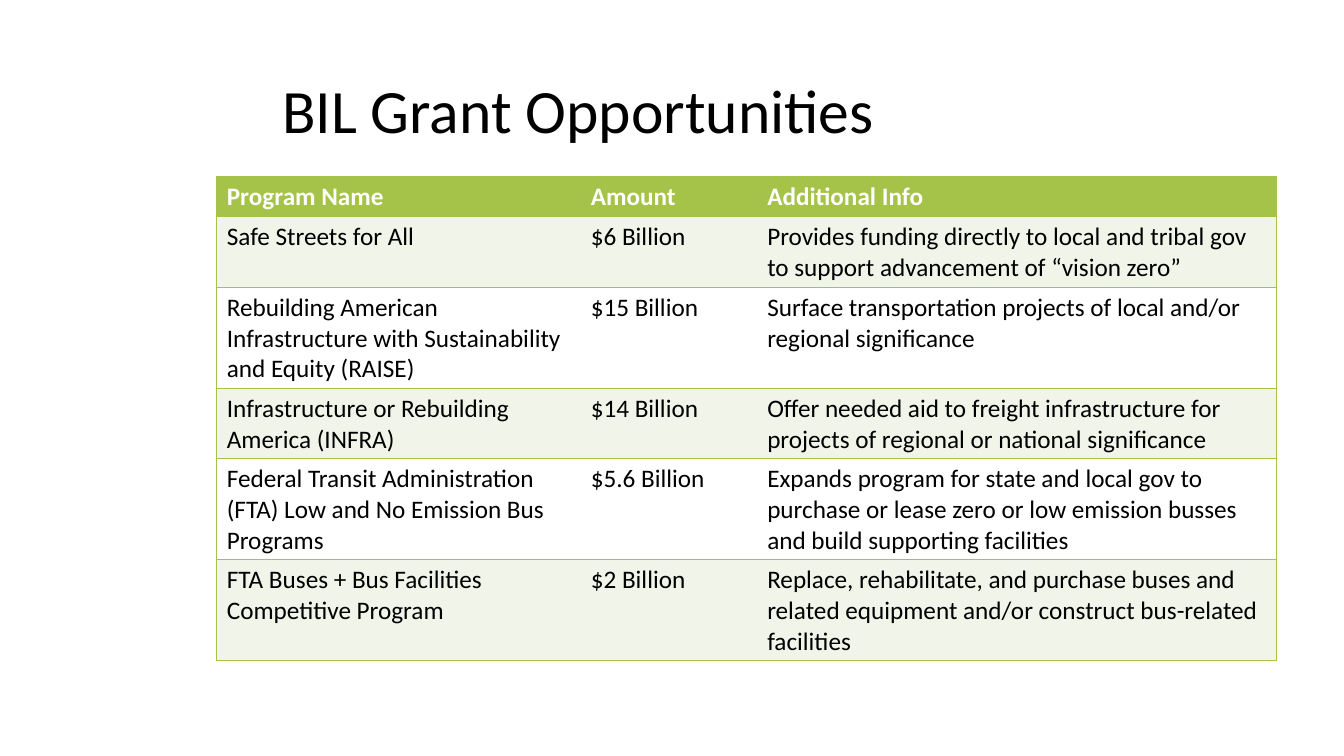
from pptx import Presentation
from pptx.dml.color import RGBColor
from pptx.enum.text import MSO_ANCHOR
from pptx.oxml.ns import qn
from pptx.util import Inches, Pt
from lxml.etree import SubElement

FONT = "Calibri"
GREEN = RGBColor(0xA5, 0xC2, 0x49)
PALE_GREEN = RGBColor(0xF0, 0xF4, 0xE9)
WHITE = RGBColor(0xFF, 0xFF, 0xFF)
BLACK = RGBColor(0x00, 0x00, 0x00)

COLUMN_WIDTHS = (3.61, 1.75, 5.15)
ROW_HEIGHTS = (0.4, 0.7, 1.0, 0.7, 1.0, 1.0)
GRANTS = [
    ("Program Name", "Amount", "Additional Info"),
    ("Safe Streets for All", "$6 Billion",
     "Provides funding directly to local and tribal gov to support "
     "advancement of “vision zero”"),
    ("Rebuilding American Infrastructure with Sustainability and Equity (RAISE)",
     "$15 Billion",
     "Surface transportation projects of local and/or regional significance"),
    ("Infrastructure or Rebuilding America (INFRA)", "$14 Billion",
     "Offer needed aid to freight infrastructure for projects of regional "
     "or national significance"),
    ("Federal Transit Administration (FTA) Low and No Emission Bus Programs",
     "$5.6 Billion",
     "Expands program for state and local gov to purchase or lease zero or "
     "low emission busses and build supporting facilities"),
    ("FTA Buses + Bus Facilities Competitive Program", "$2 Billion",
     "Replace, rehabilitate, and purchase buses and related equipment "
     "and/or construct bus-related facilities"),
]


def add_run(paragraph, text, size, color, bold=False):
    run = paragraph.add_run()
    run.text = text
    run.font.name = FONT
    run.font.size = Pt(size)
    run.font.bold = bold
    run.font.color.rgb = color


def set_borders(cell, visible_sides):
    """Draw green lines on the given sides (of L, R, T, B) and none on the others."""
    properties = cell._tc.get_or_add_tcPr()
    for side in "LRTB":
        border = SubElement(properties, qn(f"a:ln{side}"), w=str(Pt(1)))
        if side in visible_sides:
            fill = SubElement(border, qn("a:solidFill"))
            SubElement(fill, qn("a:srgbClr"), val=str(GREEN))
        else:
            SubElement(border, qn("a:noFill"))


def add_title(slide, left, top, width, height):
    title = slide.shapes.add_textbox(left, top, width, height).text_frame
    title.word_wrap = True
    title.vertical_anchor = MSO_ANCHOR.MIDDLE
    title.paragraphs[0].line_spacing = 0.9
    add_run(title.paragraphs[0], "BIL Grant Opportunities", 44, BLACK)


def add_grant_table(slide, left, top, width, height):
    grants = slide.shapes.add_table(
        len(GRANTS), len(COLUMN_WIDTHS), left, top, width, height).table
    for column, column_width in zip(grants.columns, COLUMN_WIDTHS):
        column.width = Inches(column_width)
    for row, row_height in zip(grants.rows, ROW_HEIGHTS):
        row.height = Inches(row_height)

    outer_sides = {0: "L", len(COLUMN_WIDTHS) - 1: "R"}
    for row_index, grant in enumerate(GRANTS):
        is_header = row_index == 0
        band = GREEN if is_header else PALE_GREEN if row_index % 2 else WHITE
        for column_index, text in enumerate(grant):
            cell = grants.cell(row_index, column_index)
            set_borders(cell, "TB" + outer_sides.get(column_index, ""))
            cell.fill.solid()
            cell.fill.fore_color.rgb = band
            add_run(cell.text_frame.paragraphs[0], text, 18,
                    WHITE if is_header else BLACK, is_header)


def main():
    presentation = Presentation()
    presentation.slide_width = Inches(13.33)
    presentation.slide_height = Inches(7.5)
    slide = presentation.slides.add_slide(presentation.slide_layouts[6])
    add_title(slide, Inches(2.7), Inches(0.4), Inches(9.71), Inches(1.45))
    add_grant_table(slide, Inches(2.15), Inches(1.75),
                    Inches(sum(COLUMN_WIDTHS)), Inches(sum(ROW_HEIGHTS)))
    presentation.save("out.pptx")


if __name__ == "__main__":
    main()
